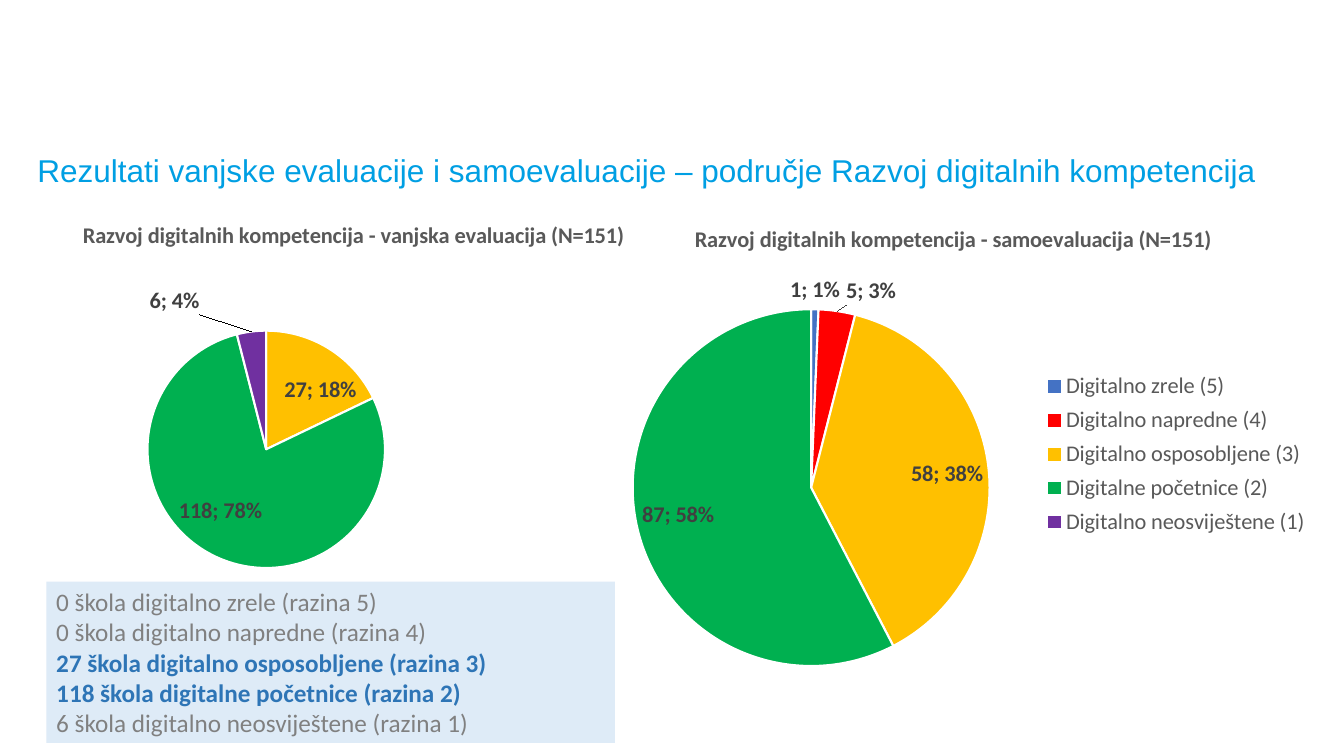
import copy

import pptx
import pptx.chart.data
import pptx.dml.color
import pptx.enum.chart
import pptx.enum.shapes
import pptx.enum.text
import pptx.oxml
import pptx.oxml.ns
import pptx.util
from pptx.util import Inches, Pt

RGB = pptx.dml.color.RGBColor
WHITE = RGB(0xFF, 0xFF, 0xFF)
CYAN = RGB(0x00, 0x9F, 0xE3)
PALE_BLUE = RGB(0xDE, 0xEB, 0xF7)
STRONG_BLUE = RGB(0x2E, 0x75, 0xB6)
GREY = RGB(0x80, 0x80, 0x80)
CHART_GREY = RGB(0x59, 0x59, 0x59)
LABEL_GREY = RGB(0x40, 0x40, 0x40)
LEVEL_COLOURS = [RGB(0x44, 0x72, 0xC4), RGB(0xFF, 0x00, 0x00), RGB(0xFF, 0xC0, 0x00),
                 RGB(0x00, 0xB0, 0x50), RGB(0x70, 0x30, 0xA0)]

TITLE = "Rezultati vanjske evaluacije i samoevaluacije – područje Razvoj digitalnih kompetencija"
LEVELS = ["Digitalno zrele (5)", "Digitalno napredne (4)", "Digitalno osposobljene (3)",
          "Digitalne početnice (2)", "Digitalno neosviještene (1)"]
# Layouts are fractions of the chart: x, y, and where given width, height.
CHARTS = [
    {"title": "Razvoj digitalnih kompetencija - vanjska evaluacija (N=151)",
     "at": (0.49, 2.03, 7.29, 3.68), "categories": ["1", "2", "3", "4", "5"],
     "values": [0, 0, 27, 118, 6], "plot": (0.03, 0.34, 0.53, 0.64),
     "title_at": (0.04, 0.03), "moved_labels": {4: (-0.07, -0.03)}, "legend": None},
    {"title": "Razvoj digitalnih kompetencija - samoevaluacija (N=151)",
     "at": (5.84, 2.03, 7.23, 4.72), "categories": LEVELS,
     "values": [1, 5, 58, 87, 0], "plot": (0.06, 0.22, 0.49, 0.75),
     "title_at": None, "moved_labels": {}, "legend": (0.63, 0.34, 0.36, 0.37)},
]
SUMMARY = [("0 škola digitalno zrele (razina 5)", False),
           ("0 škola digitalno napredne (razina 4)", False),
           ("27 škola digitalno osposobljene (razina 3)", True),
           ("118 škola digitalne početnice (razina 2)", True),
           ("6 škola digitalno neosviještene (razina 1)", False)]


def set_font(font, size, colour, bold=False, name="Calibri"):
    font.name, font.size, font.bold = name, Pt(size), bold
    font.color.rgb = colour


def chart_element(tag, value=None):
    element = pptx.oxml.parse_xml(f"<c:{tag} {pptx.oxml.ns.nsdecls('c')}/>")
    if value is not None:
        element.set("val", str(value))
    return element


def set_layout(parent, index, fractions, absolute=True, inner=False):
    """Give a chart part a manual layout as its child number index."""
    for old in parent.findall(pptx.oxml.ns.qn("c:layout")):
        parent.remove(old)
    layout, manual = chart_element("layout"), chart_element("manualLayout")
    layout.append(manual)
    if inner:
        manual.append(chart_element("layoutTarget", "inner"))
    if absolute:
        manual.append(chart_element("xMode", "edge"))
        manual.append(chart_element("yMode", "edge"))
    for tag, fraction in zip("xywh", fractions):
        manual.append(chart_element(tag, fraction))
    parent.insert(index, layout)


def label_slices(series, values, moved):
    """Show value and percent, leaving out empty slices."""
    labels = series.data_labels
    labels.show_value = labels.show_percentage = True
    labels.show_category_name = labels.show_series_name = labels.show_legend_key = False
    set_font(labels.font, 16, LABEL_GREY, bold=True)
    labels.position = pptx.enum.chart.XL_LABEL_POSITION.BEST_FIT
    group = labels._element
    separator = chart_element("separator")
    separator.text = "; "
    last_flag = group.find(pptx.oxml.ns.qn("c:showBubbleSize"))
    if last_flag is None:
        last_flag = group.find(pptx.oxml.ns.qn("c:showPercent"))
    last_flag.addnext(separator)
    leader = pptx.oxml.ns.qn("c:showLeaderLines")
    for old in group.findall(leader):
        group.remove(old)
    shared = [copy.deepcopy(child) for child in group]
    group.append(chart_element("showLeaderLines", 1))

    special = []
    for index, value in enumerate(values):
        if value and index not in moved:
            continue
        label = chart_element("dLbl")
        label.append(chart_element("idx", index))
        if value:
            set_layout(label, 1, moved[index], absolute=False)
            label.extend(copy.deepcopy(child) for child in shared)
        else:
            label.append(chart_element("delete", 1))
        special.append(label)
    for place, label in enumerate(special):
        group.insert(place, label)


def add_pie(page, spec_of_pie):
    data = pptx.chart.data.CategoryChartData()
    data.categories = spec_of_pie["categories"]
    data.add_series("Series 1", spec_of_pie["values"])
    chart = page.shapes.add_chart(pptx.enum.chart.XL_CHART_TYPE.PIE,
                                  *map(Inches, spec_of_pie["at"]), data).chart
    set_font(chart.font, 10, RGB(0, 0, 0))

    chart.has_title = True
    para = chart.chart_title.text_frame.paragraphs[0]
    span = para.add_run()
    span.text = spec_of_pie["title"]
    set_font(span.font, 16, CHART_GREY, bold=True)
    if spec_of_pie["title_at"]:
        set_layout(chart.chart_title._element, 1, spec_of_pie["title_at"])

    plot = chart.plots[0]
    plot.vary_by_categories = True
    series = plot.series[0]
    for index, colour in enumerate(LEVEL_COLOURS):
        look = series.points[index].format
        look.fill.solid()
        look.fill.fore_color.rgb = colour
        look.line.color.rgb = WHITE
        look.line.width = Pt(1.5)
    label_slices(series, spec_of_pie["values"], spec_of_pie["moved_labels"])
    plot_area = chart._chartSpace.find(".//" + pptx.oxml.ns.qn("c:plotArea"))
    set_layout(plot_area, 0, spec_of_pie["plot"], inner=True)

    chart.has_legend = spec_of_pie["legend"] is not None
    if chart.has_legend:
        chart.legend.position = pptx.enum.chart.XL_LEGEND_POSITION.RIGHT
        chart.legend.include_in_layout = False
        set_font(chart.legend.font, 16, CHART_GREY)
        set_layout(chart.legend._element, 1, spec_of_pie["legend"])


def add_summary(page):
    box = page.shapes.add_shape(pptx.enum.shapes.MSO_SHAPE.RECTANGLE,
                                Inches(0.46), Inches(5.77), Inches(5.64), Inches(1.6))
    box.shadow.inherit = False
    box.fill.solid()
    box.fill.fore_color.rgb = PALE_BLUE
    box.line.fill.background()
    frame = box.text_frame
    frame.word_wrap = True
    frame.auto_size = pptx.enum.text.MSO_AUTO_SIZE.SHAPE_TO_FIT_TEXT
    frame.vertical_anchor = pptx.enum.text.MSO_ANCHOR.TOP
    for index, (line, strong) in enumerate(SUMMARY):
        para = frame.add_paragraph() if index else frame.paragraphs[0]
        para.alignment = pptx.enum.text.PP_ALIGN.LEFT
        span = para.add_run()
        span.text = line
        set_font(span.font, 18, STRONG_BLUE if strong else GREY, bold=strong)


def add_title(page):
    box = page.shapes.title
    box.left, box.top, box.width, box.height = map(Inches, (0.27, 1.23, 12.76, 0.7))
    frame = box.text_frame
    frame.word_wrap = True
    frame.auto_size = pptx.enum.text.MSO_AUTO_SIZE.NONE
    frame.vertical_anchor = pptx.enum.text.MSO_ANCHOR.BOTTOM
    para = frame.paragraphs[0]
    para.alignment = pptx.enum.text.PP_ALIGN.LEFT
    para.line_spacing = 0.9
    span = para.add_run()
    span.text = TITLE
    set_font(span.font, 22.5, CYAN, name="Arial")


def main():
    deck = pptx.Presentation()
    deck.slide_width, deck.slide_height = Inches(13.33), Inches(7.5)
    page = deck.slides.add_slide(deck.slide_layouts[5])
    for pie in CHARTS:
        add_pie(page, pie)
    add_title(page)
    add_summary(page)
    deck.save("out.pptx")


if __name__ == "__main__":
    main()
